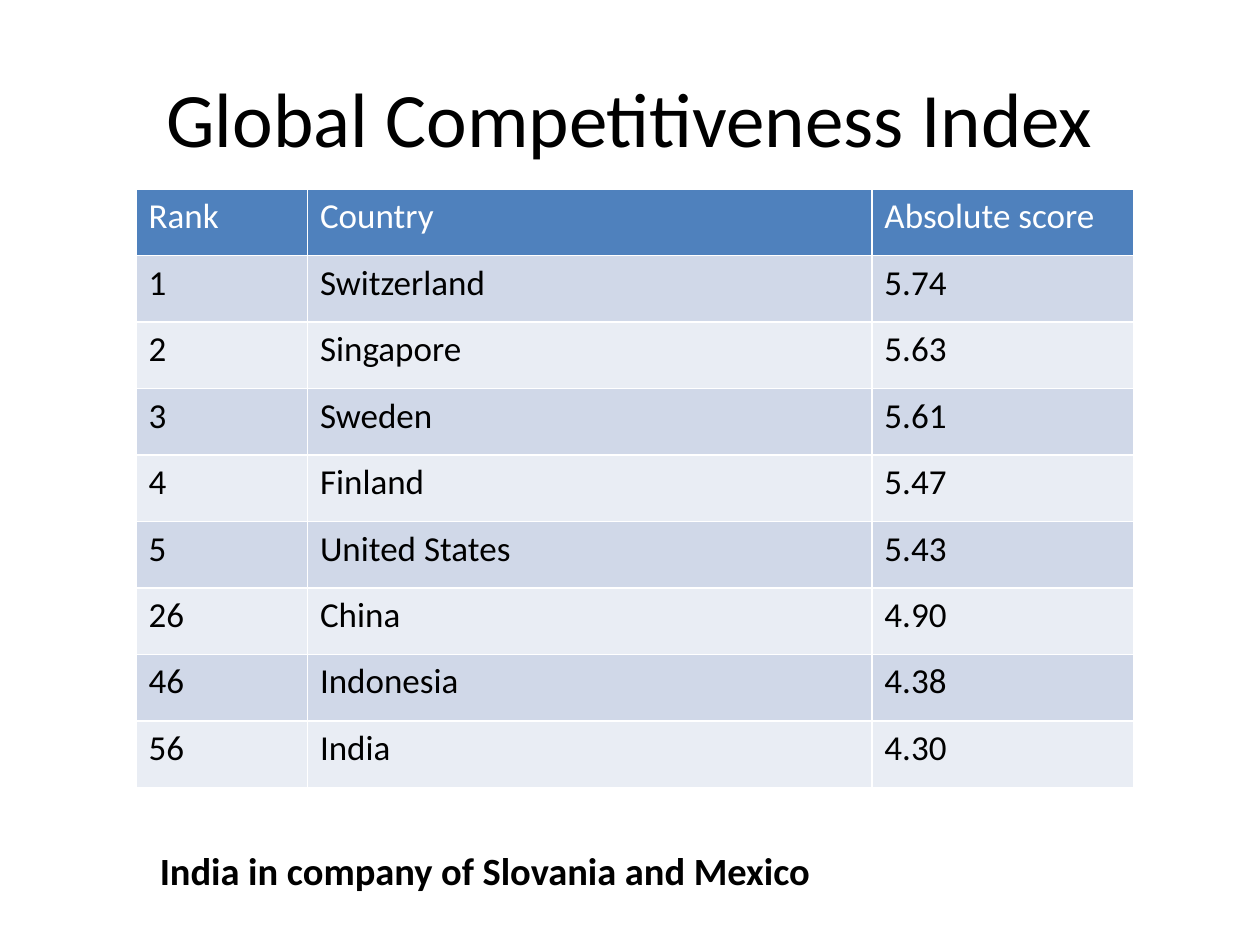
from pptx import Presentation
from pptx.dml.color import RGBColor
from pptx.enum.text import MSO_ANCHOR, PP_ALIGN
from pptx.util import Inches, Pt

MIDDLE = MSO_ANCHOR.MIDDLE
CENTER = PP_ALIGN.CENTER
FONT = "Calibri"
COLORS = {"text": "000000", "light": "FFFFFF", "head": "4F81BD",
          "odd": "D0D8E8", "even": "E9EDF4"}
WIDTHS = [1.36, 4.48, 2.08]
ROWS = [
    ("Rank", "Country", "Absolute score"),
    ("1", "Switzerland", "5.74"),
    ("2", "Singapore", "5.63"),
    ("3", "Sweden", "5.61"),
    ("4", "Finland", "5.47"),
    ("5", "United States", "5.43"),
    ("26", "China", "4.90"),
    ("46", "Indonesia", "4.38"),
    ("56", "India", "4.30"),
]


def color(name):
    return RGBColor.from_string(COLORS[name])


def style(para, size, ink="text", bold=False):
    font = para.font
    font.name = FONT
    font.size = Pt(size)
    font.bold = bold
    font.color.rgb = color(ink)


def place(shape, box):
    shape.left, shape.top, shape.width, shape.height = map(Inches, box)


def add_title(slide, box):
    title = slide.shapes.title
    place(title, box)
    frame = title.text_frame
    frame.text = "Global Competitiveness Index"
    frame.vertical_anchor = MIDDLE
    para = frame.paragraphs[0]
    para.alignment = CENTER
    style(para, 44)


def add_scores(slide, box):
    table = slide.shapes.add_table(len(ROWS), len(WIDTHS), *map(Inches, box)).table
    for col, width in zip(table.columns, WIDTHS):
        col.width = Inches(width)
    for i, row in enumerate(ROWS):
        fill = "head" if i == 0 else "odd" if i % 2 else "even"
        ink = "text" if i else "light"
        for j, text in enumerate(row):
            cell = table.cell(i, j)
            cell.text = text
            cell.fill.solid()
            cell.fill.fore_color.rgb = color(fill)
            style(cell.text_frame.paragraphs[0], 20, ink)


def add_note(slide, box):
    frame = slide.shapes.add_textbox(*map(Inches, box)).text_frame
    frame.word_wrap = True
    frame.text = "India in company of Slovania and Mexico"
    style(frame.paragraphs[0], 22, bold=True)


def main():
    deck = Presentation()
    deck.slide_width = Inches(10)
    deck.slide_height = Inches(7.5)
    slide = deck.slides.add_slide(deck.slide_layouts[5])
    add_title(slide, (0.5, 0.3, 9, 1.25))
    add_scores(slide, (1.08, 1.5, sum(WIDTHS), 4.75))
    add_note(slide, (1.17, 6.67, 6, 0.47))
    deck.save("out.pptx")


if __name__ == "__main__":
    main()
